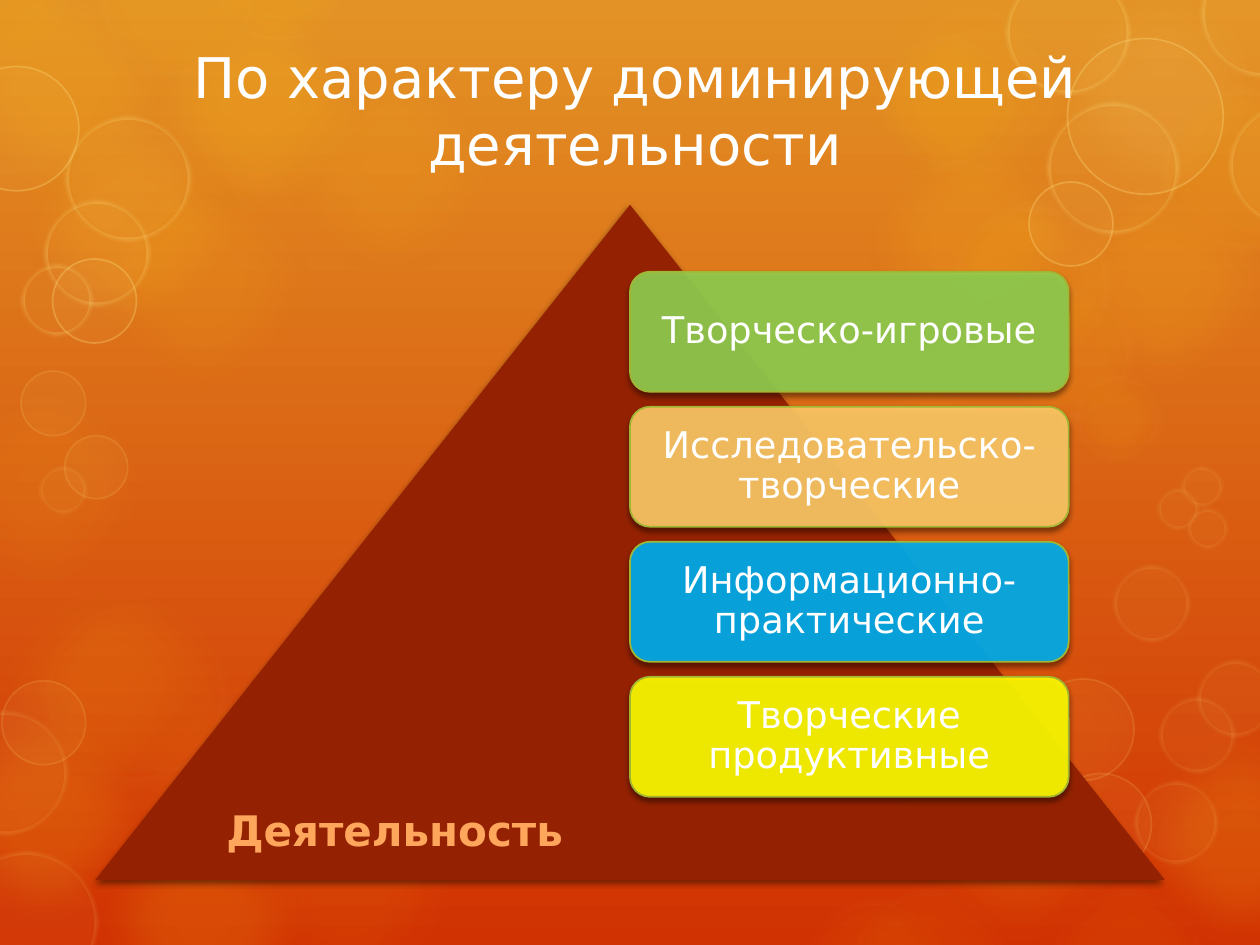
from dataclasses import dataclass

from lxml import etree
from pptx import Presentation
from pptx import util as u
from pptx.dml import color
from pptx.enum import shapes, text
from pptx.oxml import ns


@dataclass(frozen=True)
class Theme:
    """Colours, type sizes and font of the slide."""
    sky: str = "E39325"
    ground: str = "D13202"
    amber: str = "FDC61B"
    cream: str = "FFE281"
    haze: str = "FEEBAE"
    white: str = "FFFFFF"
    pyramid: str = "942202"
    card_edge: str = "A1B633"
    label: str = "FFA65D"
    label_edge: str = "FFDE77"
    font: str = "DejaVu Sans"
    title_size: int = 32
    label_size: int = 24
    card_size: int = 21


THEME = Theme()

# Each glow: left, top, opacity
GLOWS = [
    (-18, 318, 8), (41, 86, 10), (148, 22, 10), (41, 451, 16), (-40, -23, 14),
    (73, -13, 20), (0, 52, 15), (482, -21, 10), (590, 86, 15), (634, 405, 16),
    (525, 343, 5), (-49, 390, 16), (55, 377, 8), (482, 62, 15), (508, 405, 10),
    (125, 429, 8), (-50, 203, 8),
]

# Each group: fill, fill opacity, edge, edge width, edge opacity, softness, (left, top, diameter)
RING_GROUPS = [
    (THEME.amber, 10, THEME.haze, 14, 6, 12,
     [(661, 47, 99), (500, 17, 82), (541, 114, 96), (568, 161, 82), (610, 210, 57),
      (54, -47, 94), (118, -54, 82), (-41, -42, 82)]),
    (THEME.amber, 6, THEME.haze, 14, 4, 12,
     [(22, 341, 110), (455, 511, 90), (482, 505, 98), (597, 505, 95)]),
    (THEME.cream, 5, THEME.cream, 1, 15, 0,
     [(1, 389, 48), (600, 442, 58), (590, 388, 58), (12, 212, 37), (37, 249, 36)]),
    (THEME.cream, 5, THEME.cream, 5, 15, 3,
     [(-26, 486, 82), (-32, 406, 71), (549, 413, 58), (648, 446, 48), (636, 323, 44),
      (662, 398, 44), (684, 377, 44), (675, 266, 24), (661, 279, 24), (678, 290, 24),
      (22, 266, 28)]),
    (THEME.cream, 5, THEME.cream, 1, 30, 0,
     [(-26, 38, 71), (30, 148, 48), (610, 22, 89), (588, 104, 48)]),
    (THEME.cream, 5, THEME.cream, 5, 30, 3,
     [(37, 66, 72), (25, 114, 61), (12, 151, 41), (575, -17, 71), (686, -28, 72),
      (702, 59, 71), (598, 58, 76)]),
]

CARDS = [
    ("Творческо-игровые", "92D050"),
    ("Исследовательско-творческие", "FFCA66"),
    ("Информационно-практические", "00B0F0"),
    ("Творческие продуктивные", "FFFF00"),
]


def rgb(value):
    return color.RGBColor.from_string(value)


def set_opacity(part, percent):
    tint = next(part.iter(ns.qn("a:srgbClr")))
    etree.SubElement(tint, ns.qn("a:alpha"), val=str(percent * 1000))


def add_effect(shape, tag, **attributes):
    effects = shape.element.spPr.find(ns.qn("a:effectLst"))
    return etree.SubElement(effects, ns.qn(tag), **attributes)


def add_figure(slide, preset, box, fill, opacity=100, edge=None, width=1, edge_opacity=100):
    figure = slide.shapes.add_shape(preset, *map(u.Pt, box))
    figure.shadow.inherit = False
    figure.fill.solid()
    figure.fill.fore_color.rgb = rgb(fill)
    set_opacity(figure.element.spPr.find(ns.qn("a:solidFill")), opacity)
    if edge:
        figure.line.color.rgb = rgb(edge)
        figure.line.width = u.Pt(width)
        set_opacity(figure.element.spPr.find(ns.qn("a:ln")), edge_opacity)
    else:
        figure.line.fill.background()
    return figure


def add_bubble(slide, left, top, diameter, softness, *paint):
    box = (left, top, diameter, diameter)
    bubble = add_figure(slide, shapes.MSO_SHAPE.OVAL, box, *paint)
    if softness:
        add_effect(bubble, "a:softEdge", rad=str(u.Pt(softness)))


def add_shadow(figure):
    shadow = add_effect(figure, "a:outerShdw", blurRad=str(u.Pt(3)), dist=str(u.Pt(2)),
                        dir="5400000", rotWithShape="0")
    etree.SubElement(shadow, ns.qn("a:srgbClr"), val="000000")
    set_opacity(shadow, 45)


def write(frame, wording, size, tint, bold=False):
    frame.text = wording
    paragraph = frame.paragraphs[0]
    paragraph.alignment = text.PP_ALIGN.CENTER
    paragraph.font.name = THEME.font
    paragraph.font.size = u.Pt(size)
    paragraph.font.color.rgb = rgb(tint)
    paragraph.font.bold = bold
    return paragraph


def paint_background(slide):
    backdrop = slide.background.fill
    backdrop.gradient()
    backdrop.gradient_angle = 270
    for stop, tint in zip(backdrop.gradient_stops, (THEME.sky, THEME.ground)):
        stop.color.rgb = rgb(tint)
    for left, top, opacity in GLOWS:
        add_bubble(slide, left, top, 150, 25, THEME.amber, opacity)
    add_bubble(slide, 590, -23, 150, 25, THEME.cream, 10)
    add_bubble(slide, 486, 189, 96, 25, THEME.amber, 10)
    for fill, opacity, edge, width, edge_opacity, softness, rings in RING_GROUPS:
        for ring in rings:
            add_bubble(slide, *ring, softness, fill, opacity, edge, width, edge_opacity)


def place_title(slide, wording):
    title = slide.shapes.title
    title.element.getparent().append(title.element)
    title.left, title.top, title.width, title.height = map(u.Pt, (42.5, 26, 641, 73))
    frame = title.text_frame
    frame.word_wrap = True
    frame.auto_size = text.MSO_AUTO_SIZE.NONE
    frame.vertical_anchor = text.MSO_ANCHOR.MIDDLE
    write(frame, wording, THEME.title_size, THEME.white)


def add_card(slide, top, wording, fill):
    card = add_figure(slide, shapes.MSO_SHAPE.ROUNDED_RECTANGLE, (360, top, 250.7, 68.6),
                      fill, 90, THEME.card_edge)
    add_shadow(card)
    frame = card.text_frame
    frame.word_wrap = True
    frame.vertical_anchor = text.MSO_ANCHOR.MIDDLE
    frame.margin_left = frame.margin_right = u.Pt(6.5)
    frame.margin_top = frame.margin_bottom = u.Pt(6.5)
    write(frame, wording, THEME.card_size, THEME.white).line_spacing = 0.9


def add_label(slide, wording):
    label = slide.shapes.add_textbox(*map(u.Pt, (118, 456, 215, 36)))
    label.text_frame.word_wrap = False
    paragraph = write(label.text_frame, wording, THEME.label_size, THEME.label, bold=True)
    outline = etree.SubElement(paragraph.runs[0]._r.get_or_add_rPr(), ns.qn("a:ln"),
                               w=str(u.Pt(1)))
    fill = etree.SubElement(outline, ns.qn("a:solidFill"))
    etree.SubElement(fill, ns.qn("a:srgbClr"), val=THEME.label_edge)


def main():
    """Build the slide of project types by dominant activity."""
    deck = Presentation()
    deck.slide_width, deck.slide_height = u.Pt(720), u.Pt(540)
    slide = deck.slides.add_slide(deck.slide_layouts[5])
    paint_background(slide)
    place_title(slide, "По характеру доминирующей деятельности")
    pyramid = add_figure(slide, shapes.MSO_SHAPE.ISOSCELES_TRIANGLE,
                         (54.5, 117, 611, 385.7), THEME.pyramid)
    add_shadow(pyramid)
    for row, (wording, fill) in enumerate(CARDS):
        add_card(slide, 155.3 + row * 77.15, wording, fill)
    add_label(slide, "Деятельность")
    deck.save("out.pptx")


if __name__ == "__main__":
    main()
